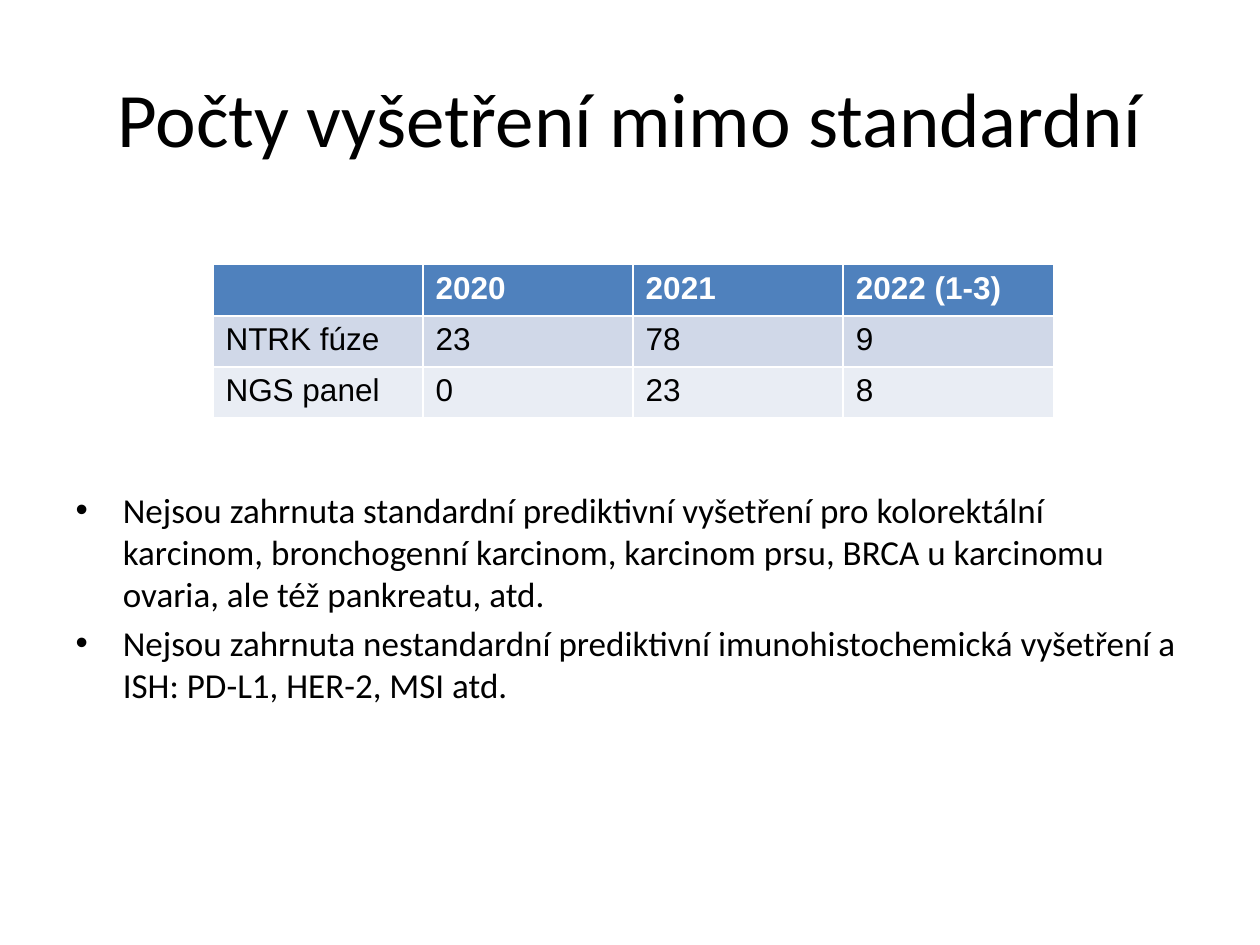
from pptx import Presentation
from pptx.dml.color import RGBColor
from pptx.enum.text import MSO_ANCHOR, PP_ALIGN
from pptx.util import Inches, Pt


def paint(hue):
    return RGBColor.from_string(hue)


def add_run(para, text, size, face, hue="000000", bold=False):
    run = para.add_run()
    run.text = text
    run.font.size = Pt(size)
    run.font.name = face
    run.font.bold = bold
    run.font.color.rgb = paint(hue)


deck = Presentation()
deck.slide_width, deck.slide_height = Inches(10), Inches(7.5)
slide = deck.slides.add_slide(deck.slide_layouts[1])
title, body = slide.placeholders

# Title
title.left, title.top = Inches(0.5), Inches(0.3)
title.width, title.height = Inches(9), Inches(1.25)
title.text_frame.vertical_anchor = MSO_ANCHOR.MIDDLE
para = title.text_frame.paragraphs[0]
para.alignment = PP_ALIGN.CENTER
add_run(para, "Počty vyšetření mimo standardní", 44, "Calibri")

# Table of counts; the default table style draws the white borders
rows = [
    ["", "2020", "2021", "2022 (1-3)"],
    ["NTRK fúze", "23", "78", "9"],
    ["NGS panel", "0", "23", "8"],
]
fills = ["4F81BD", "D0D8E8", "E9EDF4"]
table = slide.shapes.add_table(
    len(rows), len(rows[0]), Inches(1.69), Inches(2.1), Inches(6.67), Inches(1.22)
).table
for r, (row, fill) in enumerate(zip(rows, fills)):
    head = r == 0
    for c, text in enumerate(row):
        cell = table.cell(r, c)
        cell.fill.solid()
        cell.fill.fore_color.rgb = paint(fill)
        if text:
            hue = "FFFFFF" if head else "000000"
            add_run(cell.text_frame.paragraphs[0], text, 18, "Arial", hue, head)

# Notes on what is left out, with the template's bullets
notes = [
    "Nejsou zahrnuta standardní prediktivní vyšetření pro kolorektální karcinom, "
    "bronchogenní karcinom, karcinom prsu, BRCA u karcinomu ovaria, "
    "ale též pankreatu, atd.",
    "Nejsou zahrnuta nestandardní prediktivní imunohistochemická vyšetření a "
    "ISH: PD-L1, HER-2, MSI atd.",
]
body.left, body.top = Inches(0.5), Inches(3.83)
body.width, body.height = Inches(9), Inches(2.87)
frame = body.text_frame
for i, note in enumerate(notes):
    para = frame.add_paragraph() if i else frame.paragraphs[0]
    add_run(para, note, 20, "Calibri")

deck.save("out.pptx")
